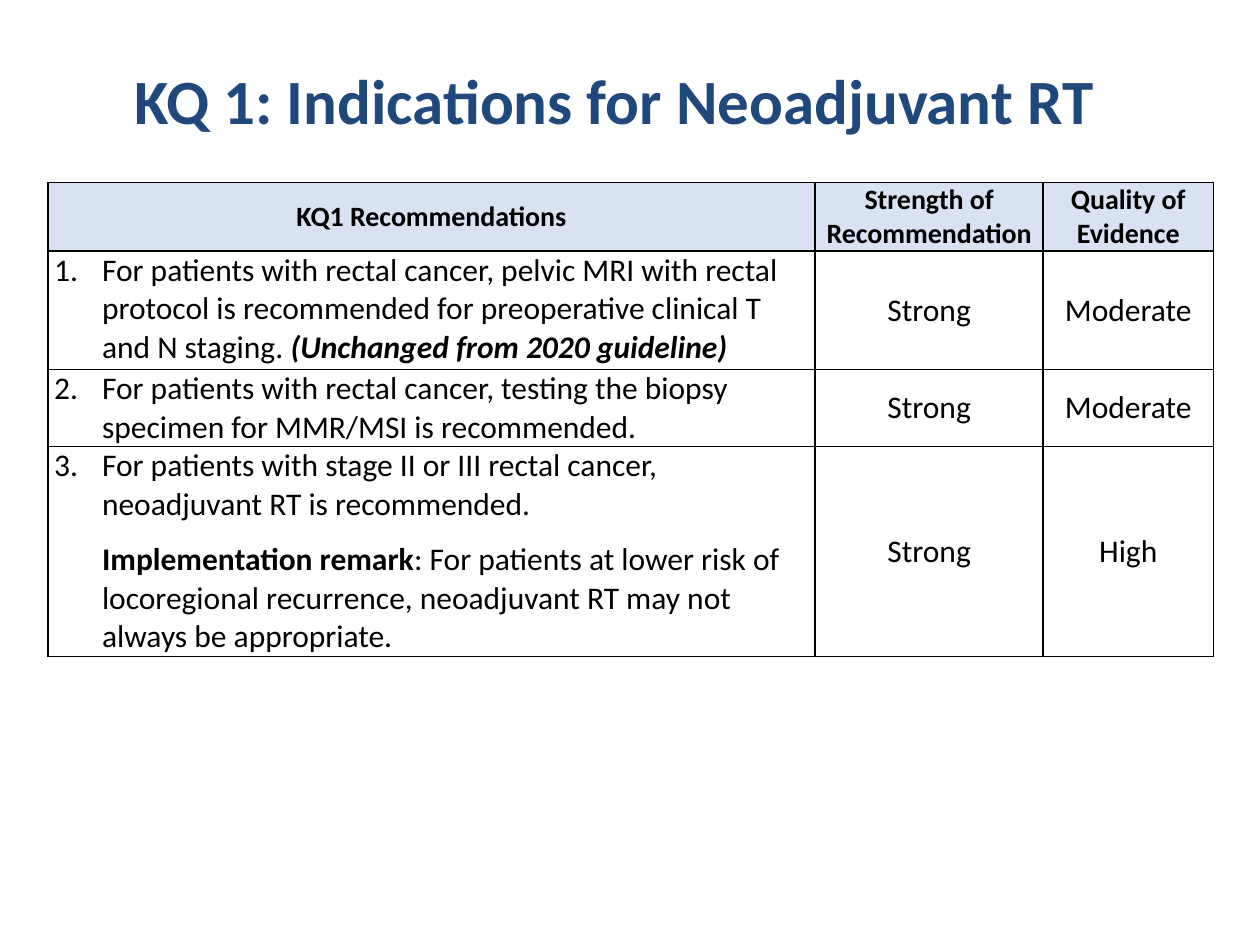
from dataclasses import dataclass

from lxml.etree import SubElement
from pptx import Presentation
from pptx.dml.color import RGBColor
from pptx.enum.text import MSO_ANCHOR as Anchor, MSO_AUTO_SIZE as AutoSize, PP_ALIGN as Align
from pptx.oxml import parse_xml
from pptx.oxml.ns import nsdecls, qn
from pptx.util import Inches, Pt

FONT = "Calibri"
NAVY, BLACK, PALE_BLUE = "1F497D", "000000", "D9E2F3"
HEADERS = ("KQ1 Recommendations", "Strength of Recommendation", "Quality of Evidence")
COLUMN_WIDTHS = (6.09, 1.81, 1.35)
ROW_HEIGHTS = (0.54, 0.94, 0.61, 1.66)


@dataclass
class Recommendation:
    text: str
    strength: str
    quality: str
    note: str = ""
    remark: str = ""


RECOMMENDATIONS = (
    Recommendation(
        "For patients with rectal cancer, pelvic MRI with rectal protocol is "
        "recommended for preoperative clinical T and N staging. ",
        "Strong", "Moderate", note="(Unchanged from 2020 guideline)"),
    Recommendation(
        "For patients with rectal cancer, testing the biopsy specimen for "
        "MMR/MSI is recommended.",
        "Strong", "Moderate"),
    Recommendation(
        "For patients with stage II or III rectal cancer, neoadjuvant RT is recommended.",
        "Strong", "High",
        remark=": For patients at lower risk of locoregional recurrence, "
               "neoadjuvant RT may not always be appropriate."),
)


def color(value: str) -> RGBColor:
    return RGBColor.from_string(value)


def add_run(paragraph, text: str, size: float, bold=False, italic=False, ink=BLACK) -> None:
    run = paragraph.add_run()
    run.text = text
    font = run.font
    font.name, font.size, font.bold, font.italic = FONT, Pt(size), bold, italic
    font.color.rgb = color(ink)


def format_cell(cell, fill: str = "") -> None:
    cell.margin_left = cell.margin_right = Inches(0.05)
    cell.margin_top = cell.margin_bottom = 0
    if fill:
        cell.fill.solid()
        cell.fill.fore_color.rgb = color(fill)
    else:
        cell.fill.background()
    properties = cell._tc.get_or_add_tcPr()
    for index, side in enumerate(("lnL", "lnR", "lnT", "lnB")):
        properties.insert(index, parse_xml(
            f'<a:{side} {nsdecls("a")} w="12700"><a:solidFill>'
            f'<a:srgbClr val="{BLACK}"/></a:solidFill></a:{side}>'))


def fill_centered(cell, text: str, size: float, bold=False, fill: str = "") -> None:
    format_cell(cell, fill)
    cell.vertical_anchor = Anchor.MIDDLE
    paragraph = cell.text_frame.paragraphs[0]
    paragraph.alignment = Align.CENTER
    add_run(paragraph, text, size, bold)


def indent(paragraph, left: float, first: float):
    properties = paragraph._p.get_or_add_pPr()
    properties.set("marL", str(Inches(left)))
    properties.set("indent", str(Inches(first)))
    return properties


def fill_recommendation(cell, number: int, item: Recommendation) -> None:
    format_cell(cell)
    cell.vertical_anchor = Anchor.TOP
    paragraph = cell.text_frame.paragraphs[0]
    properties = indent(paragraph, 0.38, -0.38)
    SubElement(properties, qn("a:buFont"), typeface="+mj-lt")
    SubElement(properties, qn("a:buAutoNum"), type="arabicPeriod", startAt=str(number))
    add_run(paragraph, item.text, 18)
    if item.note:
        add_run(paragraph, item.note, 18, bold=True, italic=True)
    if item.remark:
        remark = cell.text_frame.add_paragraph()
        indent(remark, 0.38, 0)
        remark.space_before = Pt(10)
        add_run(remark, "Implementation remark", 18, bold=True)
        add_run(remark, item.remark, 18)


def add_title(slide, text: str) -> None:
    title = slide.shapes.title
    title.left, title.top = Inches(0.25), Inches(0.37)
    title.width, title.height = Inches(9.25), Inches(0.83)
    frame = title.text_frame
    frame.auto_size = AutoSize.NONE
    frame.word_wrap = True
    frame.vertical_anchor = Anchor.MIDDLE
    frame.paragraphs[0].alignment = Align.CENTER
    add_run(frame.paragraphs[0], text, 36, bold=True, ink=NAVY)


def add_recommendations(slide) -> None:
    table = slide.shapes.add_table(
        len(ROW_HEIGHTS), len(COLUMN_WIDTHS), Inches(0.38), Inches(1.45),
        Inches(sum(COLUMN_WIDTHS)), Inches(sum(ROW_HEIGHTS))).table
    table.horz_banding = False
    for column, width in zip(table.columns, COLUMN_WIDTHS):
        column.width = Inches(width)
    for row, height in zip(table.rows, ROW_HEIGHTS):
        row.height = Inches(height)
    for index, header in enumerate(HEADERS):
        fill_centered(table.cell(0, index), header, 16, bold=True, fill=PALE_BLUE)
    for number, item in enumerate(RECOMMENDATIONS, 1):
        fill_recommendation(table.cell(number, 0), number, item)
        fill_centered(table.cell(number, 1), item.strength, 18)
        fill_centered(table.cell(number, 2), item.quality, 18)


def main() -> None:
    presentation = Presentation()
    presentation.slide_width, presentation.slide_height = Inches(10), Inches(7.5)
    slide = presentation.slides.add_slide(presentation.slide_layouts[5])
    add_title(slide, "KQ 1: Indications for Neoadjuvant RT")
    add_recommendations(slide)
    presentation.save("out.pptx")


if __name__ == "__main__":
    main()
